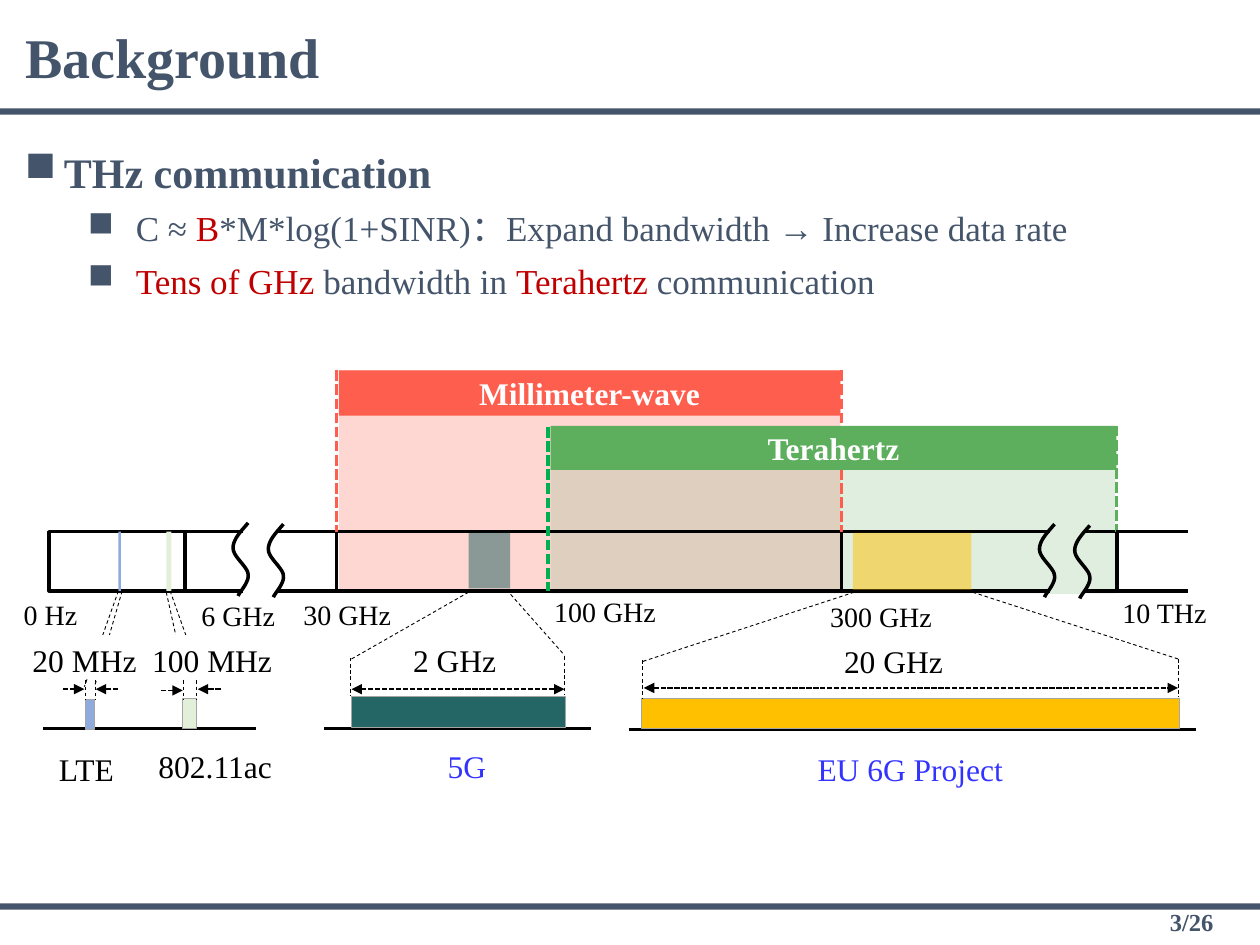
import pptx
import pptx.util
import pptx.dml.color
import pptx.enum.dml
import pptx.enum.shapes
import pptx.enum.text
import pptx.oxml
import pptx.oxml.ns
import lxml.etree

Inches = pptx.util.Inches
Pt = pptx.util.Pt
RGBColor = pptx.dml.color.RGBColor
ALIGN = pptx.enum.text.PP_ALIGN
MIDDLE = pptx.enum.text.MSO_ANCHOR.MIDDLE
DASH = pptx.enum.dml.MSO_LINE.DASH
SYS_DASH = pptx.enum.dml.MSO_LINE.SQUARE_DOT
qn = pptx.oxml.ns.qn

FONT = "Times New Roman"
SLATE = RGBColor(0x44, 0x54, 0x6A)
CRIMSON = RGBColor(0xC0, 0x00, 0x00)
BLACK = RGBColor(0, 0, 0)
WHITE = RGBColor(0xFF, 0xFF, 0xFF)
CORAL = RGBColor(0xFD, 0x5E, 0x4D)
GREEN = RGBColor(0x5D, 0xAE, 0x5D)
SOFT_GREEN = RGBColor(0x85, 0xBC, 0x85)
PALE_GREEN = RGBColor(0xE0, 0xEE, 0xE0)
EDGE_GREEN = RGBColor(0x00, 0xB0, 0x50)
LTE_BLUE = RGBColor(0x8F, 0xAA, 0xDC)
WIFI_GREEN = RGBColor(0xE2, 0xF0, 0xD9)
TEAL = RGBColor(0x17, 0x5C, 0x5C)
AMBER = RGBColor(0xFF, 0xC0, 0x00)
GRAY = RGBColor(0xA5, 0xA5, 0xA5)
BLUE = RGBColor(0x33, 0x33, 0xFF)

AXIS_TOP, AXIS_BOTTOM = 4.22, 4.69


def add_run(paragraph, text, size, color, bold=False):
    run = paragraph.add_run()
    run.text = text
    for name, value in {"name": FONT, "size": Pt(size), "bold": bold}.items():
        setattr(run.font, name, value)
    run.font.color.rgb = color


def add_rect(slide, box, fill=None, alpha=100, line=None, width=0.25):
    rect = slide.shapes.add_shape(pptx.enum.shapes.MSO_SHAPE.RECTANGLE, *map(Inches, box))
    rect.shadow.inherit = False
    if fill is None:
        rect.fill.background()
    else:
        rect.fill.solid()
        rect.fill.fore_color.rgb = fill
        if alpha < 100:
            color = rect.fill._xPr.find(qn("a:solidFill"))[0]
            lxml.etree.SubElement(color, qn("a:alpha"), val=str(alpha * 1000))
    if line is None:
        rect.line.fill.background()
    else:
        rect.line.color.rgb = line
        rect.line.width = Pt(width)
    return rect


def add_line(slide, start, end, color=BLACK, width=2, dash=None, arrows=()):
    line = slide.shapes.add_connector(
        pptx.enum.shapes.MSO_CONNECTOR.STRAIGHT, *map(Inches, (*start, *end)))
    line.line.color.rgb = color
    line.line.width = Pt(width)
    if dash:
        line.line.dash_style = dash
    for arrow in arrows:
        lxml.etree.SubElement(line.line._get_or_add_ln(), qn("a:" + arrow), type="triangle")
    lxml.etree.SubElement(line._element.spPr, qn("a:effectLst"))


def add_guide(slide, start, end):
    add_line(slide, start, end, width=0.5, dash=DASH)


def add_span(slide, start, end, arrows=("tailEnd",)):
    add_line(slide, start, end, width=1, dash=SYS_DASH, arrows=arrows)


def add_label(slide, text, box, size=18, color=BLACK, wrap=False, align=ALIGN.LEFT,
              fill=None, bold=False):
    label = slide.shapes.add_textbox(*map(Inches, box))
    if fill is not None:
        label.fill.solid()
        label.fill.fore_color.rgb = fill
    label.text_frame.word_wrap = wrap
    label.text_frame.auto_size = pptx.enum.text.MSO_AUTO_SIZE.SHAPE_TO_FIT_TEXT
    paragraph = label.text_frame.paragraphs[0]
    paragraph.alignment = align
    add_run(paragraph, text, size, color, bold)


def add_banner(slide, text, box, color):
    frame = add_rect(slide, box, color).text_frame
    frame.vertical_anchor = MIDDLE
    frame.paragraphs[0].alignment = ALIGN.CENTER
    add_run(frame.paragraphs[0], text, 18, WHITE, True)


def add_wave(slide, left, top):
    curves = (((0.12, 0), (0.06, 0.07), (0, 0.13), (0, 0.2)),
              ((0, 0.2), (0, 0.27), (0.12, 0.35), (0.12, 0.41)),
              ((0.12, 0.41), (0.13, 0.47), (0.05, 0.55), (0.04, 0.58)))
    points = []
    for curve in curves:
        for step in range(11):
            t = step / 10
            weights = ((1 - t) ** 3, 3 * t * (1 - t) ** 2, 3 * t * t * (1 - t), t ** 3)
            points.append(tuple(
                Inches(origin + sum(w * p[axis] for w, p in zip(weights, curve)))
                for axis, origin in enumerate((left, top))))
    builder = slide.shapes.build_freeform(*points[0])
    builder.add_line_segments(points[1:], close=False)
    wave = builder.convert_to_shape()
    wave.shadow.inherit = False
    wave.fill.background()
    wave.line.color.rgb = BLACK
    wave.line.width = Pt(2)


def add_axis_break(slide, left, top, gap_color):
    for y in (AXIS_TOP, AXIS_BOTTOM):
        add_line(slide, (left + 0.36, y), (left + 0.08, y), gap_color, 3)
    add_wave(slide, left, top)
    add_wave(slide, left + 0.28, top + 0.01)


def add_heading(slide):
    title = slide.shapes.title
    for name, value in zip(("left", "top", "width", "height"), (0.1, 0.13, 2.56, 0.64)):
        setattr(title, name, Inches(value))
    title.text_frame.word_wrap = False
    title.text_frame.vertical_anchor = pptx.enum.text.MSO_ANCHOR.TOP
    title.text_frame.paragraphs[0].alignment = ALIGN.LEFT
    add_run(title.text_frame.paragraphs[0], "Background", 32, SLATE, True)
    for top in (0.86, 7.17):
        add_rect(slide, (0, top, 10, 0.05), SLATE)
    add_label(slide, "3/26", (7.48, 7.15, 2.25, 0.4), 14, SLATE, True, ALIGN.RIGHT, bold=True)


def add_bullets(slide):
    frame = slide.shapes.add_textbox(*map(Inches, (0.1, 0.91, 9.7, 2.39))).text_frame
    frame.word_wrap = True
    bullets = (
        (0, (("THz communication", SLATE),)),
        (1, (("C ≈ ", SLATE), ("B", CRIMSON),
             ("*M*log(1+SINR)：Expand bandwidth → Increase data rate", SLATE))),
        (1, (("Tens of GHz ", CRIMSON), ("bandwidth in ", SLATE),
             ("Terahertz ", CRIMSON), ("communication", SLATE))),
    )
    formats = ((24, True, 1.5, 0.31, 0.31), (20, False, 1.25, 0.88, 0.38))
    for index, (level, runs) in enumerate(bullets):
        size, bold, spacing, margin, hanging = formats[level]
        paragraph = frame.add_paragraph() if index else frame.paragraphs[0]
        paragraph.level = level
        paragraph.line_spacing = spacing
        properties = paragraph._p.get_or_add_pPr()
        properties.set("marL", str(Inches(margin)))
        properties.set("indent", str(-Inches(hanging)))
        color = lxml.etree.SubElement(properties, qn("a:buClr"))
        lxml.etree.SubElement(color, qn("a:srgbClr"), val=str(SLATE))
        lxml.etree.SubElement(properties, qn("a:buChar"), char="■")
        for text, run_color in runs:
            add_run(paragraph, text, size, run_color, bold)


def add_spectrum(slide):
    add_rect(slide, (2.69, 2.94, 3.98, 1.74), CORAL, 25)
    add_rect(slide, (4.37, 3.39, 4.48, 1.32), SOFT_GREEN, 25)
    add_rect(slide, (0.39, AXIS_TOP, 8.48, 0.47), line=BLACK, width=2)
    for x, top, color in ((2.67, 2.94, CORAL), (6.68, 2.94, CORAL),
                          (4.35, 3.39, EDGE_GREEN), (8.86, 3.38, GREEN)):
        add_line(slide, (x, top), (x, AXIS_BOTTOM), color, dash=SYS_DASH)
    for left, top, width, height, color, alpha in (
            (0.94, 4.22, 0.02, 0.47, LTE_BLUE, 100), (1.32, 4.22, 0.04, 0.47, WIFI_GREEN, 100),
            (3.72, 4.23, 0.33, 0.44, TEAL, 50), (6.77, 4.23, 0.94, 0.45, AMBER, 50)):
        add_rect(slide, (left, top, width, height), color, alpha)
    add_axis_break(slide, 1.85, 4.15, WHITE)
    add_axis_break(slide, 8.25, 4.16, PALE_GREEN)
    for y in (AXIS_TOP, AXIS_BOTTOM):
        add_line(slide, (8.86, y), (9.43, y))
    add_banner(slide, "Millimeter-wave", (2.69, 2.94, 3.98, 0.36), CORAL)
    add_banner(slide, "Terahertz", (4.37, 3.38, 4.49, 0.35), GREEN)
    for x in (1.47, 2.67, 6.68, 8.86):
        add_line(slide, (x, AXIS_TOP), (x, AXIS_BOTTOM))
    for text, left, top, width in (
            ("0 Hz", 0.09, 4.69, 0.63), ("6 GHz", 1.5, 4.7, 0.79), ("30 GHz", 2.31, 4.69, 0.9),
            ("100 GHz", 4.3, 4.67, 1.02), ("300 GHz", 6.49, 4.71, 1.02),
            ("10 THz", 8.81, 4.68, 0.88)):
        add_label(slide, text, (left, top, width, 0.37), 16)


def add_channels(slide):
    for left, right, y in ((0.34, 2.03, 5.78), (2.57, 4.69, 5.78), (4.99, 9.49, 5.79)):
        add_line(slide, (left, y), (right, y))
    for left, top, width, color, alpha in (
            (0.68, 5.55, 0.07, LTE_BLUE, 100), (1.45, 5.54, 0.11, WIFI_GREEN, 100),
            (2.79, 5.53, 1.7, TEAL, 94), (5.09, 5.54, 4.27, AMBER, 100)):
        add_rect(slide, (left, top, width, 0.24), color, alpha, GRAY)
    for start, end in (
            ((0.94, 4.69), (0.67, 5.45)), ((0.97, 4.69), (0.75, 5.45)),
            ((1.32, 4.7), (1.45, 5.29)), ((1.35, 4.69), (1.56, 5.28)),
            ((3.72, 4.7), (2.79, 5.23)), ((4.02, 4.68), (4.48, 5.2)),
            ((6.78, 4.7), (5.1, 5.25)), ((7.72, 4.7), (9.35, 5.23))):
        add_guide(slide, start, end)
    for x, top in ((0.68, 5.25), (0.76, 5.25), (1.46, 5.25), (1.56, 5.25),
                   (2.78, 5.22), (4.48, 5.21), (5.1, 5.24), (9.35, 5.23)):
        add_guide(slide, (x, top), (x, top + 0.3))
    for start, end, y in ((0.5, 0.67, 5.47), (0.94, 0.76, 5.47),
                          (1.28, 1.45, 5.48), (1.75, 1.57, 5.47)):
        add_span(slide, (start, y), (end, y))
    for left, right, y in ((2.79, 4.48, 5.47), (5.11, 9.35, 5.46)):
        add_span(slide, (left, y), (right, y), ("headEnd", "tailEnd"))
    for text, left, width, height in (("20 MHz", 0.16, 1.04, 0.35), ("100 MHz", 1.11, 1.16, 0.35),
                                      ("2 GHz", 3.18, 0.87, 0.4)):
        add_label(slide, text, (left, 5.04, width, height), fill=WHITE)
    add_label(slide, "20 GHz", (6.6, 5.05, 0.99, 0.4))
    add_label(slide, "LTE", (0.37, 5.9, 0.64, 0.4))
    add_label(slide, "802.11ac", (1.16, 5.88, 1.13, 0.4))
    add_label(slide, "5G", (2.1, 5.88, 3.21, 0.4), color=BLUE, wrap=True, align=ALIGN.CENTER)
    add_label(slide, "EU 6G Project", (6.39, 5.9, 1.69, 0.4), color=BLUE)


def main():
    deck = pptx.Presentation()
    deck.slide_width, deck.slide_height = Inches(10), Inches(7.5)
    slide = deck.slides.add_slide(deck.slide_layouts[5])
    add_heading(slide)
    add_bullets(slide)
    add_spectrum(slide)
    add_channels(slide)
    deck.save("out.pptx")


if __name__ == "__main__":
    main()
